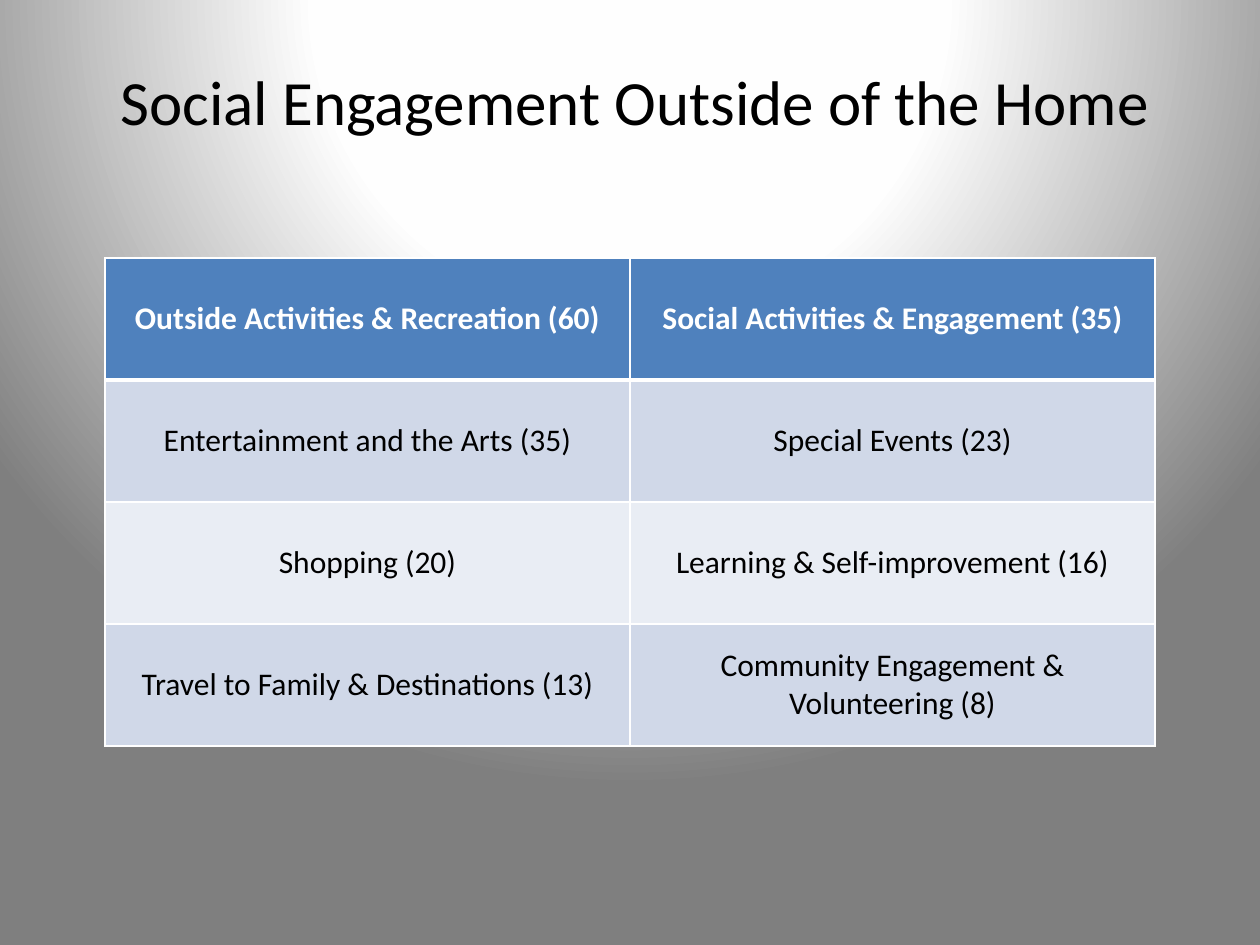
from pptx import Presentation
from pptx.dml.color import RGBColor
from pptx.enum.text import MSO_ANCHOR as Anchor, PP_ALIGN as Align
from pptx.oxml import parse_xml
from pptx.oxml.ns import nsdecls
from pptx.util import Pt

TITLE = "Social Engagement Outside of the Home"
ACTIVITIES = [
    ("Outside Activities & Recreation (60)", "Social Activities & Engagement (35)"),
    ("Entertainment and the Arts (35)", "Special Events (23)"),
    ("Shopping (20)", "Learning & Self-improvement (16)"),
    ("Travel to Family & Destinations (13)", "Community Engagement & Volunteering (8)"),
]
BACKGROUND_STOPS = [(0, "FFFFFF"), (40, "FEFEFE"), (100, "7F7F7F")]

BLACK = RGBColor(0x00, 0x00, 0x00)
WHITE = RGBColor(0xFF, 0xFF, 0xFF)
HEADER_BLUE = RGBColor(0x4F, 0x81, 0xBD)
BANDS = [RGBColor(0xE9, 0xED, 0xF4), RGBColor(0xD0, 0xD8, 0xE8)]

COLUMN_WIDTH, ROW_HEIGHT = 525, 122


def px(length):
    return round(length * 914400 / 126)


def write(frame, text, size, color=BLACK, bold=False):
    frame.word_wrap = True
    paragraph = frame.paragraphs[0]
    paragraph.alignment = Align.CENTER
    run = paragraph.add_run()
    run.text = text
    run.font.name = "Calibri"
    run.font.size = Pt(size)
    run.font.bold = bold
    run.font.color.rgb = color


def paint_background(slide):
    stops = "".join(
        f'<a:gs pos="{position * 1000}"><a:srgbClr val="{color}"/></a:gs>'
        for position, color in BACKGROUND_STOPS
    )
    slide.element.cSld.insert(0, parse_xml(
        f'<p:bg {nsdecls("p", "a")}><p:bgPr><a:gradFill rotWithShape="1">'
        f'<a:gsLst>{stops}</a:gsLst><a:path path="circle">'
        '<a:fillToRect l="50000" t="-80000" r="50000" b="180000"/></a:path>'
        '</a:gradFill><a:effectLst/></p:bgPr></p:bg>'
    ))


def add_borders(cell, **widths):
    properties = cell._tc.get_or_add_tcPr()
    for side in "LRTB":
        properties.append(parse_xml(
            f'<a:ln{side} {nsdecls("a")} w="{Pt(widths.get(side, 1))}">'
            f'<a:solidFill><a:srgbClr val="{WHITE}"/></a:solidFill></a:ln{side}>'
        ))


def add_activities(slide):
    rows, columns = len(ACTIVITIES), len(ACTIVITIES[0])
    table = slide.shapes.add_table(
        rows, columns, px(105), px(258),
        px(columns * COLUMN_WIDTH), px(rows * ROW_HEIGHT),
    ).table
    for column in table.columns:
        column.width = px(COLUMN_WIDTH)
    for index, labels in enumerate(ACTIVITIES):
        header = index == 0
        table.rows[index].height = px(ROW_HEIGHT)
        for column, label in enumerate(labels):
            cell = table.cell(index, column)
            cell.vertical_anchor = Anchor.MIDDLE
            add_borders(cell, T=3 if index == 1 else 1, B=3 if header else 1)
            cell.fill.solid()
            cell.fill.fore_color.rgb = HEADER_BLUE if header else BANDS[index % 2]
            write(cell.text_frame, label, 18, color=WHITE if header else BLACK, bold=header)


def main():
    deck = Presentation()
    deck.slide_width, deck.slide_height = px(1260), px(945)
    slide = deck.slides.add_slide(deck.slide_layouts[6])
    paint_background(slide)
    title = slide.shapes.add_textbox(px(68), px(21), px(1134), px(158)).text_frame
    title.vertical_anchor = Anchor.MIDDLE
    write(title, TITLE, 36)
    add_activities(slide)
    deck.save("out.pptx")


if __name__ == "__main__":
    main()
